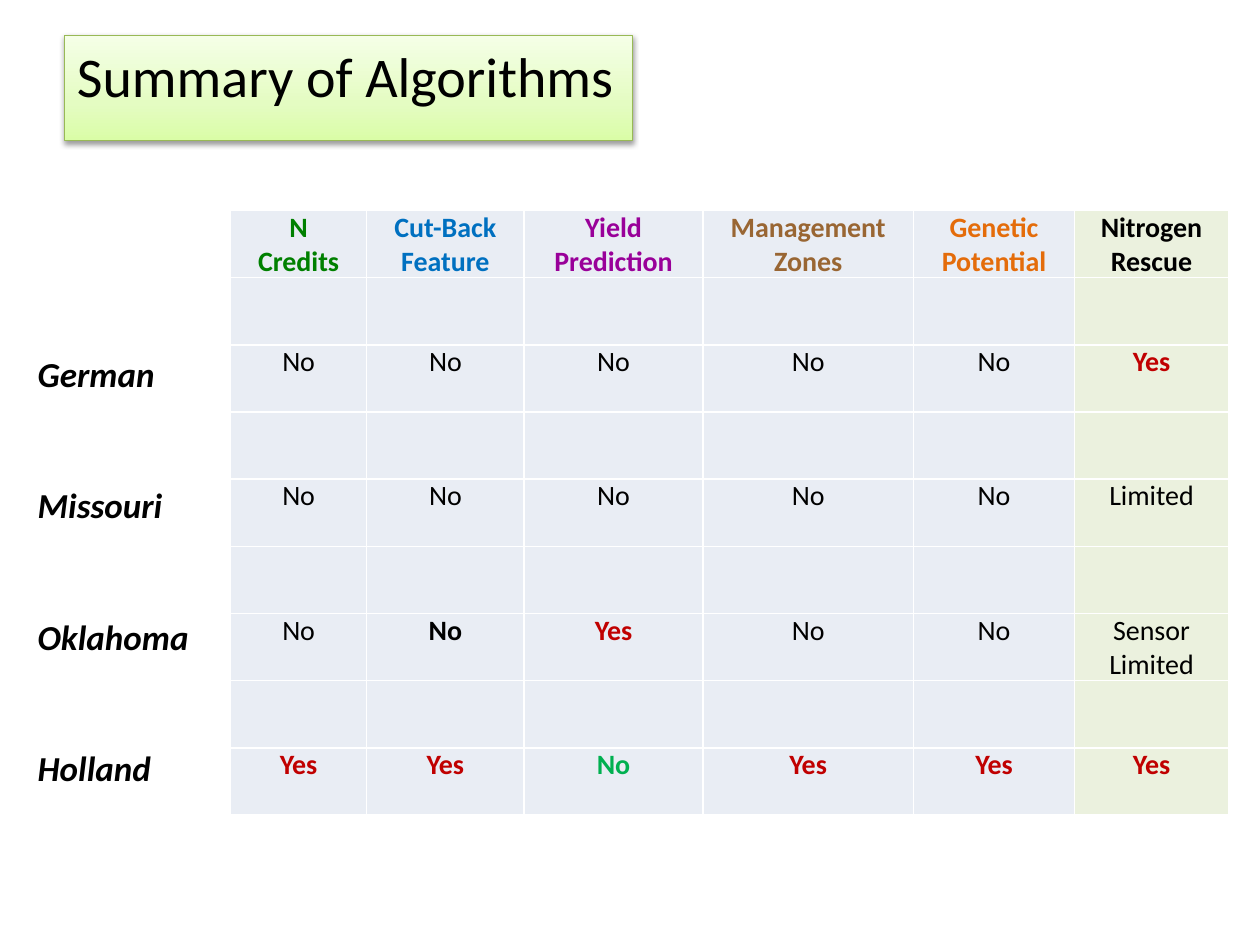
from dataclasses import dataclass

from lxml import etree
from pptx import Presentation, util as u
from pptx.dml.color import RGBColor
from pptx.enum import text
from pptx.oxml import ns, parse_xml


@dataclass(frozen=True)
class Theme:
    font: str = "Calibri"
    title: int = 32
    label: int = 20
    cell: int = 16
    black: str = "000000"
    red: str = "C00000"
    green: str = "00B050"
    border: str = "FFFFFF"
    title_line: str = "98B955"
    title_stops: tuple = ((0, "DAFDA7"), (35, "E4FCC2"), (100, "F5FFE7"))
    plain_fill: str = "E9EDF4"
    last_fill: str = "EBF1DE"


T = Theme()

# Content
TITLE = "Summary of Algorithms"
COLUMNS = [  # heading, colour, width in inches
    ("N\nCredits", "008000", 1.08),
    ("Cut-Back\nFeature", "0070C0", 1.25),
    ("Yield\nPrediction", "990099", 1.42),
    ("Management\nZones", "996633", 1.67),
    ("Genetic\nPotential", "E46C0A", 1.28),
    ("Nitrogen\nRescue", T.black, 1.22),
]
ALGORITHMS = {
    "German": ["No", "No", "No", "No", "No", "Yes"],
    "Missouri": ["No", "No", "No", "No", "No", "Limited"],
    "Oklahoma": ["No", "No", "Yes", "No", "No", "Sensor\nLimited"],
    "Holland": ["Yes", "Yes", "No", "Yes", "Yes", "Yes"],
}
# Answers whose colour and weight differ from the usual
SPECIAL = {("Oklahoma", 1): (T.black, True), ("Holland", 2): (T.green, True)}

LABEL_GAP = 51  # points between algorithm names
TABLE_LEFT, TABLE_TOP, ROW_HEIGHT = 1.83, 1.67, 4.8 / 9


def style(p, size, color, bold=False, italic=False, align=text.PP_ALIGN.LEFT):
    p.alignment = align
    f = p.font
    f.name, f.size, f.bold, f.italic = T.font, u.Pt(size), bold, italic
    f.color.rgb = RGBColor.from_string(color)


def place(sp, left, top, width, height):
    sp.left, sp.top = u.Inches(left), u.Inches(top)
    sp.width, sp.height = u.Inches(width), u.Inches(height)


def add_title(s):
    sp = s.shapes.title
    place(sp, 0.51, 0.28, 4.51, 0.64)
    tf = sp.text_frame
    tf.text = TITLE
    tf.word_wrap = False
    tf.auto_size = text.MSO_AUTO_SIZE.SHAPE_TO_FIT_TEXT
    tf.vertical_anchor = text.MSO_ANCHOR.TOP
    style(tf.paragraphs[0], T.title, T.black)
    sp.line.color.rgb = RGBColor.from_string(T.title_line)
    sp.line.width = u.Pt(0.75)
    # Upward three-stop gradient and soft shadow
    stops = "".join(f'<a:gs pos="{pos * 1000}"><a:srgbClr val="{c}"/></a:gs>'
                    for pos, c in T.title_stops)
    ln = sp.line._get_or_add_ln()
    ln.addprevious(parse_xml(
        f'<a:gradFill {ns.nsdecls("a")} rotWithShape="1"><a:gsLst>{stops}</a:gsLst>'
        '<a:lin ang="16200000" scaled="0"/></a:gradFill>'))
    ln.addnext(parse_xml(
        f'<a:effectLst {ns.nsdecls("a")}><a:outerShdw blurRad="{u.Pt(3.1)}" '
        f'dist="{u.Pt(1.6)}" dir="5400000" rotWithShape="0">'
        f'<a:srgbClr val="{T.black}"><a:alpha val="38000"/></a:srgbClr>'
        '</a:outerShdw></a:effectLst>'))


def add_labels(s):
    sp = s.shapes.add_textbox(0, 0, 0, 0)
    place(sp, 0.2, 2.75, 1.41, 3.6)
    tf = sp.text_frame
    tf.word_wrap = False
    tf.text = "\n".join(ALGORITHMS)
    for i, p in enumerate(tf.paragraphs):
        style(p, T.label, T.black, bold=True, italic=True)
        p.space_before = u.Pt(LABEL_GAP if i else 0)


def set_borders(cell):
    tcPr = cell._tc.get_or_add_tcPr()
    for i, side in enumerate(("lnL", "lnR", "lnT", "lnB")):
        ln = etree.Element(ns.qn(f"a:{side}"), w=str(u.Pt(1)))
        fill = etree.SubElement(ln, ns.qn("a:solidFill"))
        etree.SubElement(fill, ns.qn("a:srgbClr"), val=T.border)
        tcPr.insert(i, ln)


def fill_cell(cell, words, color, bold):
    cell.text = words
    for p in cell.text_frame.paragraphs:
        style(p, T.cell, color, bold, align=text.PP_ALIGN.CENTER)


def add_answers(s):
    rows, cols = 1 + 2 * len(ALGORITHMS), len(COLUMNS)
    table = s.shapes.add_table(
        rows, cols, u.Inches(TABLE_LEFT), u.Inches(TABLE_TOP),
        u.Inches(sum(width for _, _, width in COLUMNS)),
        u.Inches(rows * ROW_HEIGHT)).table
    table.first_row = table.horz_banding = False
    for row in table.rows:
        row.height = u.Inches(ROW_HEIGHT)

    # Backgrounds, borders and headings
    for c, (heading, color, width) in enumerate(COLUMNS):
        table.columns[c].width = u.Inches(width)
        for r in range(rows):
            cell = table.cell(r, c)
            cell.margin_left = cell.margin_right = 0
            cell.margin_top = cell.margin_bottom = 0
            cell.fill.solid()
            cell.fill.fore_color.rgb = RGBColor.from_string(
                T.last_fill if c == cols - 1 else T.plain_fill)
            set_borders(cell)
        fill_cell(table.cell(0, c), heading, color, True)

    # Answers fill every second row
    for i, (name, answers) in enumerate(ALGORITHMS.items()):
        for c, answer in enumerate(answers):
            usual = (T.red, True) if answer == "Yes" else (T.black, False)
            color, bold = SPECIAL.get((name, c), usual)
            fill_cell(table.cell(2 * i + 2, c), answer, color, bold)


def main():
    prs = Presentation()
    prs.slide_width, prs.slide_height = u.Inches(10), u.Inches(7.5)
    s = prs.slides.add_slide(prs.slide_layouts.get_by_name("Title Only"))
    add_title(s)
    add_labels(s)
    add_answers(s)
    prs.save("out.pptx")


if __name__ == "__main__":
    main()
